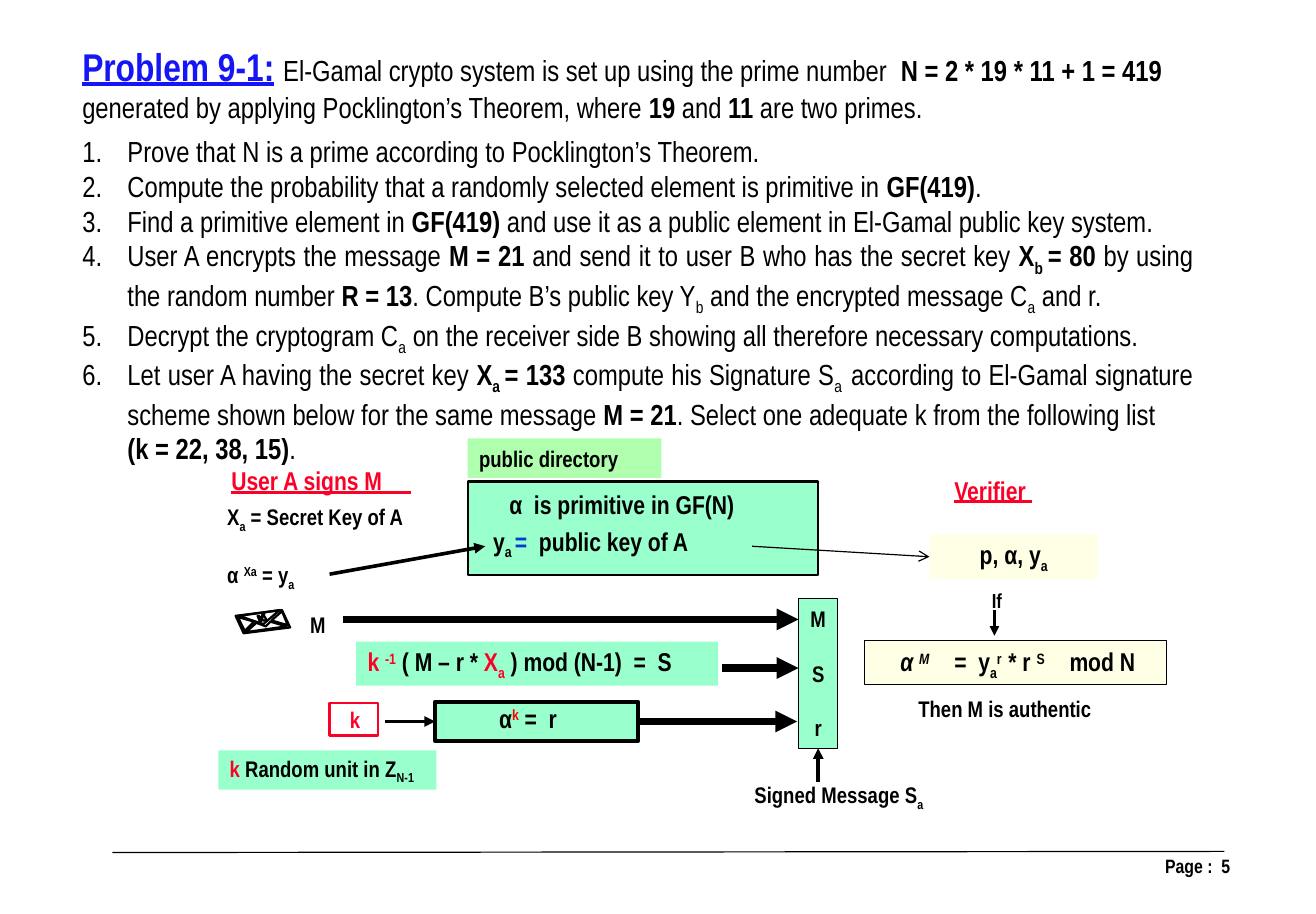
from dataclasses import dataclass
from typing import Optional, Union

from lxml.etree import SubElement
from pptx import Presentation
from pptx.dml.color import RGBColor as RGB
from pptx.enum.shapes import MSO_CONNECTOR as CONN, MSO_SHAPE as SHAPE
from pptx.enum.text import MSO_ANCHOR as ANCHOR, PP_ALIGN as ALIGN
from pptx.oxml.ns import qn
from pptx.util import Pt

COLORS = {"black": "000000", "white": "FFFFFF", "blue": "1515F5", "equals": "023DD0",
          "red": "FC0128", "pure_red": "FF0000", "mint": "99FFCC", "lime": "AFFFAF",
          "cream": "FFFFE5"}
FONT = "Arial Narrow"
L, C, R, J = ALIGN.LEFT, ALIGN.CENTER, ALIGN.RIGHT, ALIGN.JUSTIFY


@dataclass
class Run:
    text: str
    bold: bool = True
    base: int = 0
    color: str = "black"
    size: Optional[float] = None
    italic: bool = False
    underline: bool = False


Line = list[Union[str, Run]]


@dataclass
class Box:
    name: str
    x: float
    y: float
    w: float
    h: float
    lines: tuple[Line, ...] = ()
    size: float = 14
    align: ALIGN = L
    fill: Optional[str] = None
    line: Optional[str] = None
    weight: float = 0.75
    wrap: bool = True
    top: bool = False
    gap: float = 0
    tabs: tuple[float, ...] = ()


@dataclass
class Arrow:
    x1: float
    y1: float
    x2: float
    y2: float
    weight: float
    head: Optional[str] = "triangle"
    begin: Optional[tuple[str, int]] = None
    end: Optional[tuple[str, int]] = None


def sub(text: str, **fmt) -> Run:
    return Run(text, base=-25, **fmt)


def sup(text: str, **fmt) -> Run:
    return Run(text, base=30, **fmt)


def red(text: str, **fmt) -> Run:
    return Run(text, color="red", **fmt)


def small(text: str) -> Run:
    return sub(text, bold=False)


def write(tf, lines, *, size=14.0, align=L, bold=True, gap=0.0, tabs=()) -> list:
    paragraphs = []
    for n, line in enumerate(lines):
        p = tf.add_paragraph() if n else tf.paragraphs[0]
        p.alignment = align
        if n and gap:
            p.space_before = Pt(gap)
        if tabs:
            tab_list = SubElement(p._p.get_or_add_pPr(), qn("a:tabLst"))
            for pos in tabs:
                SubElement(tab_list, qn("a:tab"), pos=str(Pt(pos)), algn="l")
        for item in line:
            run = Run(item, bold) if isinstance(item, str) else item
            r = p.add_run()
            r.text = run.text
            f = r.font
            f.name, f.size = FONT, Pt(run.size or size)
            f.bold, f.italic, f.underline = run.bold, run.italic, run.underline
            f.color.rgb = RGB.from_string(COLORS[run.color])
            if run.base:
                r._r.get_or_add_rPr().set("baseline", str(run.base * 1000))
        paragraphs.append(p)
    return paragraphs


def draw_box(s, b: Box):
    area = [Pt(v) for v in (b.x, b.y, b.w, b.h)]
    if b.fill:
        sp = s.shapes.add_shape(SHAPE.RECTANGLE, *area)
        sp.shadow.inherit = False
        sp.fill.solid()
        sp.fill.fore_color.rgb = RGB.from_string(COLORS[b.fill])
        if b.line:
            sp.line.color.rgb = RGB.from_string(COLORS[b.line])
            sp.line.width = Pt(b.weight)
        else:
            sp.line.fill.background()
    else:
        sp = s.shapes.add_textbox(*area)
    tf = sp.text_frame
    tf.word_wrap = b.wrap
    tf.vertical_anchor = ANCHOR.TOP if b.top else ANCHOR.MIDDLE
    write(tf, b.lines, size=b.size, align=b.align, gap=b.gap, tabs=b.tabs)
    return sp


def draw_arrow(s, a: Arrow, shapes: dict) -> None:
    c = s.shapes.add_connector(CONN.STRAIGHT, *[Pt(v) for v in (a.x1, a.y1, a.x2, a.y2)])
    if a.begin:
        c.begin_connect(shapes[a.begin[0]], a.begin[1])
    if a.end:
        c.end_connect(shapes[a.end[0]], a.end[1])
    c.line.color.rgb = RGB.from_string(COLORS["black"])
    c.line.width = Pt(a.weight)
    if a.head:
        SubElement(c.line._get_or_add_ln(), qn("a:tailEnd"), type=a.head)
    SubElement(c._element.spPr, qn("a:effectLst"))


def draw_outline(s, points) -> None:
    (x, y), *rest = [(Pt(px), Pt(py)) for px, py in points]
    builder = s.shapes.build_freeform(x, y)
    builder.add_line_segments(rest, close=True)
    sp = builder.convert_to_shape()
    sp.shadow.inherit = False
    sp.fill.background()
    sp.line.color.rgb = RGB.from_string(COLORS["black"])
    sp.line.width = Pt(1.38)


def draw_problem(s) -> None:
    tf = s.shapes.add_textbox(Pt(44), Pt(23), Pt(703.4), Pt(266.4)).text_frame
    tf.word_wrap = True
    paragraphs = write(tf, PROBLEM, size=18, align=J, bold=False)
    paragraphs[1].space_after = Pt(6)
    for p in paragraphs[2:]:
        numbered = p is not paragraphs[-1]
        pPr = p._p.get_or_add_pPr()
        pPr.set("marL", str(Pt(28)))
        pPr.set("indent", str(Pt(-28 if numbered else 0)))
        if numbered:
            SubElement(pPr, qn("a:buFont"), typeface=FONT)
            SubElement(pPr, qn("a:buAutoNum"), type="arabicPeriod")


PROBLEM = (
    [Run("Problem 9-1:", color="blue", size=24, underline=True), Run(" ", size=24),
     "El-Gamal crypto system is set up using the prime number  ", Run("N = 2 * 19 * 11 + 1 = 419")],
    ["generated by applying Pocklington’s Theorem, where ", Run("19"), " and ", Run("11"),
     " are two primes."],
    ["Prove that N is a prime according to Pocklington’s Theorem."],
    ["Compute the probability that a randomly selected element is primitive in ",
     Run("GF(419)"), "."],
    ["Find a primitive element in ", Run("GF(419) "),
     "and use it as a public element in El-Gamal public key system."],
    ["User A encrypts the message ", Run("M = 21 "), "and send it to user B who has the secret key ",
     Run("X"), sub("b "), Run("= 80 "), "by using the random number ", Run("R = 13"),
     ". Compute B’s public key Y", small("b"), " and the encrypted message C", small("a"), " and r."],
    ["Decrypt the cryptogram C", small("a"),
     " on the receiver side B showing all therefore necessary computations."],
    ["Let user A having the secret key ", Run("X"), sub("a "), Run("= 133 "),
     "compute his Signature S", small("a  "),
     "according to El-Gamal signature scheme shown below for the same message ", Run("M = 21"),
     ". Select one adequate k from the following list"],
    [Run("(k = 22, 38, 15)"), "."],
)
BOXES = (
    Box("page", 586, 527, 184.4, 24, (["Page :  5"],), 12, R, top=True),
    Box("check", 536.4, 397.4, 187.2, 27.4, fill="cream", line="black"),
    Box("directory", 290.2, 298.8, 217.4, 58.3, fill="mint", line="black", weight=1.5),
    Box("k_frame", 204.5, 436.3, 30.2, 20.2, fill="white", line="red", weight=1.5),
    Box("signed", 437, 482.4, 167, 24.5, (["Signed Message S", sub("a")],), align=C),
    Box("message", 185, 375.1, 24.5, 24.5, (["M"],), align=C, wrap=False),
    Box("signature", 221, 398.2, 224.6, 27.4,
        ([red("k "), red("-1", base=30), " ( M – r * ", red("X"), red("a", base=-25),
          " ) mod (N-1)  =  S"],), 16, fill="mint"),
    Box("authentic", 561.6, 427.7, 123.8, 24.5, (["Then M is authentic"],), align=C, wrap=False),
    Box("primitive", 308.9, 298.8, 170, 28.1, (["α  is primitive in GF(N)"],), 16),
    Box("secret", 133.9, 310.3, 156.2, 59,
        (["X", sub("a"), " = Secret Key of A"], ["α ", sup("Xa"), " = y", sub("a")]), gap=17),
    Box("k", 208.8, 434.2, 23, 24.5, ([red("k")],), align=C, wrap=False),
    Box("signer", 108, 285.1, 182.9, 27.4, ([red("User A signs M     ", underline=True)],),
        16, C, top=True),
    Box("verifier", 585, 290.9, 100, 26.6, ([red("Verifier ", underline=True)],), 16, top=True),
    Box("public_key", 298.8, 323.3, 255.6, 27.4,
        (["y", sub("a "), Run("= ", color="equals"), " public key of A"],), 16),
    Box("random", 135.4, 465.8, 135.4, 24.5, ([red("k"), " Random unit in Z", sub("N-1")],),
        fill="mint"),
    Box("r_frame", 270, 435.6, 126, 24.5, fill="mint", line="black", weight=2.25),
    Box("r", 259.9, 432, 135.4, 27.4, (["α", sup("k", color="pure_red"), " =  r"],), 16, C),
    Box("packet", 495.4, 371.5, 24.5, 92.9, (["M"], ["S"], ["r"]), align=C, fill="mint",
        line="black", wrap=False, gap=17),
    Box("equation", 551.5, 398.2, 172, 27.4,
        ([Run("α ", italic=True), sup("M", italic=True), "\t=  y", sub("a"), sup("r  "), "* r ",
          sup("S"), "\tmod N"],), 16, tabs=(33.5, 105)),
    Box("if", 607.7, 360.7, 21.6, 23.8, (["If"],), 12.6, C, wrap=False),
    Box("directory_title", 290.2, 272.2, 120.2, 24.5, (["public directory"],), fill="lime"),
    Box("public_values", 576.7, 331.9, 104.4, 27.4, (["p, α, y", sub("a")],), 16, C, fill="cream"),
)
ARROWS = (
    Arrow(69.8, 529.2, 759.6, 528.5, 0.75, None),
    Arrow(213.1, 384.5, 495.4, 384.5, 4.5),
    Arrow(507.65, 485.3, 507.65, 464.4, 2.25, end=("packet", 2)),
    Arrow(239, 447.85, 270, 447.85, 2.25, end=("r_frame", 1)),
    Arrow(204.5, 356.4, 301, 339.1, 2.25),
    Arrow(617, 378.7, 617, 394.6, 1.5),
    Arrow(466.6, 339.1, 576.7, 345.6, 0.75, "arrow", end=("public_values", 1)),
    Arrow(447.8, 414.7, 495.4, 414.7, 4.5),
    Arrow(396, 447.85, 494.6, 447.85, 4.5, begin=("r_frame", 3)),
)
ENVELOPE = (
    ((146.2, 382.3), (175, 378.7), (180, 389.5), (151.2, 393.1)),
    ((148.3, 382.3), (163.4, 387.4), (173.5, 378.7)),
    ((147.6, 383), (151.9, 391.7), (157.7, 385.9)),
    ((175, 379.4), (168.5, 385.2), (178.6, 388.1)),
    ((159.1, 386.6), (152.6, 392.4), (177.8, 388.8), (167.8, 385.9), (164.9, 388.8)),
    ((162.7, 384.5), (160.6, 382.3), (162, 385.9), (161.3, 385.9), (159.8, 382.3),
     (162.7, 384.5), (162.7, 381.6), (164.2, 380.9), (163.4, 381.6), (165.6, 385.2), (163.4, 385.2)),
)


def main() -> None:
    prs = Presentation()
    prs.slide_width, prs.slide_height = Pt(816.48), Pt(567.36)
    s = prs.slides.add_slide(prs.slide_layouts[6])
    draw_problem(s)
    shapes = {b.name: draw_box(s, b) for b in BOXES}
    for arrow in ARROWS:
        draw_arrow(s, arrow, shapes)
    for points in ENVELOPE:
        draw_outline(s, points)
    prs.save("out.pptx")


if __name__ == "__main__":
    main()
